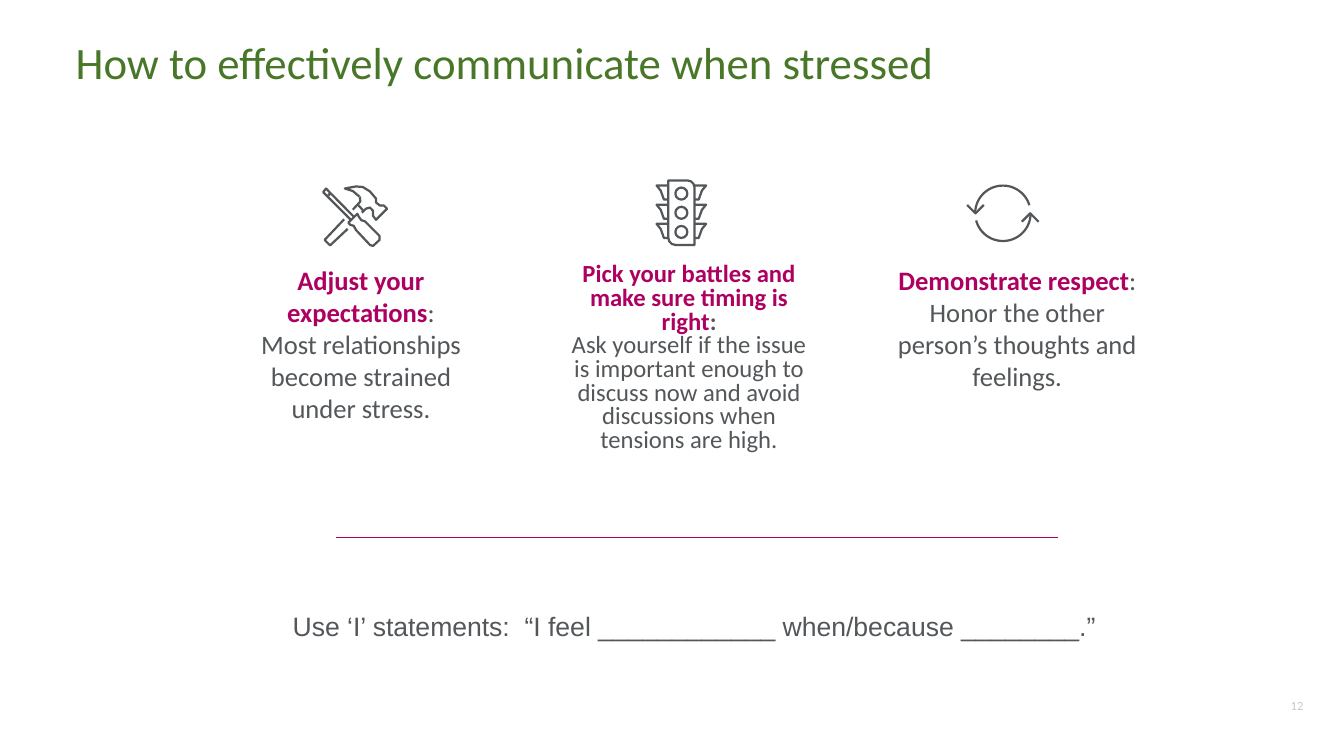
import math
from dataclasses import dataclass

from lxml import etree
from pptx import Presentation
from pptx import util as u
from pptx.dml.color import RGBColor
from pptx.enum import shapes, text
from pptx.oxml import ns


@dataclass(frozen=True)
class Theme:
    heading_font: str = "Calibri"
    plain_font: str = "Arial"
    green: str = "497728"
    magenta: str = "AE0061"
    gray: str = "53575A"
    pale: str = "C8C8C8"
    title_size: float = 32
    body_size: float = 19
    dense_size: float = 17.6
    number_size: float = 9
    rule_width: float = 0.75
    icon_stroke: float = 1.6


@dataclass(frozen=True)
class Box:
    left: float
    top: float
    width: float
    height: float

    def lengths(self):
        return [u.Pt(n) for n in (self.left, self.top, self.width, self.height)]

    def inner(self, left, top, width, height):
        return Box(self.left + left, self.top + top, width, height)


THEME = Theme()
PITCH = 234.4
FIRST_COLUMN = Box(170, 188.6, 175.7, 144)


def add_text(page, box, spans, size, font=THEME.heading_font, inset=0):
    """Add one paragraph of (words, colour, bold) spans; words of None break the line."""
    frame = page.shapes.add_textbox(*box.lengths()).text_frame
    frame.word_wrap = True
    frame.margin_left = frame.margin_right = u.Pt(inset)
    frame.margin_top = frame.margin_bottom = u.Pt(inset / 2)
    para = frame.paragraphs[0]
    para.font.size = u.Pt(size)
    for words, colour, bold in spans:
        if words is None:
            para.add_line_break()
            continue
        span = para.add_run()
        span.text = words
        span.font.name = font
        span.font.size = u.Pt(size)
        span.font.bold = bold
        span.font.color.rgb = RGBColor.from_string(colour)
    return frame


def outline(shape):
    """Leave the shape unfilled, with the icon stroke."""
    shape.shadow.inherit = False
    shape.fill.background()
    shape.line.color.rgb = RGBColor.from_string(THEME.gray)
    shape.line.width = u.Pt(THEME.icon_stroke)


def draw_path(page, box, points, close=False):
    """Stroke a path whose points are relative to the box."""
    start, *rest = [(u.Pt(box.left + x), u.Pt(box.top + y)) for x, y in points]
    builder = page.shapes.build_freeform(*start, scale=1.0)
    builder.add_line_segments(rest, close=close)
    outline(builder.convert_to_shape())


def draw_preset(page, box, kind):
    shape = page.shapes.add_shape(kind, *box.lengths())
    outline(shape)
    return shape


def tools_icon(page, box):
    screwdriver_shaft = [(23, 25.9), (3.2, 5.8), (1.1, 8.3), (20.9, 28.1)]
    shaft_slit = [(4.7, 9.4), (6.1, 10.8)]
    screwdriver_grip = [
        (25.6, 23.8), (19.1, 30.2), (20.5, 31.7), (23, 32.4), (24.5, 35.3), (34.6, 46.1),
        (36.7, 46.8), (41.4, 42.5), (41.4, 39.6), (31, 29.2), (28.4, 28.4), (26.6, 25.9)]
    hammer_handle = [(16.2, 27.7), (2.2, 42.5), (6.1, 46.4), (18.7, 34.6)]
    hammer_neck = [(27.4, 11.5), (27.7, 15.1), (22.3, 20.9)]
    neck_edge = [(25.6, 16.9), (30.2, 22)]
    hammer_head = [
        (28.8, 23), (31.7, 20.2), (34.6, 19.4), (36.7, 21.6), (36.7, 25.2), (38.9, 28.1),
        (46.8, 20.2), (44.6, 18), (41.8, 18), (38.9, 15.8), (38.9, 13), (34.6, 7.9),
        (29.5, 4.7), (24.5, 4.3), (16.6, 5.8), (22.3, 7.6), (27, 11.5)]
    for part in (screwdriver_shaft, shaft_slit, hammer_handle, hammer_neck,
                 neck_edge, hammer_head):
        draw_path(page, box, part)
    draw_path(page, box, screwdriver_grip, close=True)


def traffic_light_icon(page, box):
    housing = draw_preset(page, box.inner(9.4, 0.7, 18.7, 46.1),
                          shapes.MSO_SHAPE.ROUND_2_DIAG_RECTANGLE)
    housing.adjustments[0] = 0
    housing.adjustments[1] = 0.27
    flap = [(9.4, 4.3), (1, 4.3), (4, 8), (6.3, 14.4), (9.4, 14.4)]
    for lamp in range(3):
        drop = lamp * 13.7
        draw_preset(page, box.inner(14.4, 5.8 + drop, 8.6, 8.6), shapes.MSO_SHAPE.OVAL)
        draw_path(page, box, [(x, y + drop) for x, y in flap])
        draw_path(page, box, [(box.width - x, y + drop) for x, y in flap])


def cycle_icon(page, box):
    centre_x, centre_y, radius = 26.6, 20.6, 19.8
    for first, last in ((180, 343), (0, 165)):
        angles = [math.radians(first + (last - first) * step / 40) for step in range(41)]
        draw_path(page, box, [(centre_x + radius * math.cos(a),
                               centre_y + radius * math.sin(a)) for a in angles])
    for tip_x, tail_y in ((7, -6), (46.1, 6)):
        draw_path(page, box, [(tip_x - 6, centre_y + tail_y), (tip_x, centre_y),
                              (tip_x + 6, centre_y + tail_y)])


def title(page, box):
    frame = add_text(page, box, [("How to effectively communicate when stressed",
                                  THEME.green, False)], THEME.title_size)
    frame.paragraphs[0].line_spacing = 0.9


def advice_column(page, box, spans, dense=False):
    size = THEME.dense_size if dense else THEME.body_size
    para = add_text(page, box, spans, size).paragraphs[0]
    para.alignment = text.PP_ALIGN.CENTER
    if dense:
        para.line_spacing = 0.8
        para.space_before = para.space_after = u.Pt(3)


def advice_row(page, box):
    """Place three columns of advice, each under its icon."""
    magenta, gray = THEME.magenta, THEME.gray
    columns = [
        (tools_icon, Box(229.7, 128.9, 47.5, 48), False,
         [("Adjust your expectations", magenta, True), (":", gray, False), (None, gray, False),
          ("Most relationships become strained under stress.", gray, False)]),
        (traffic_light_icon, Box(468, 128.2, 37.4, 47.5), True,
         [("Pick your battles and make sure timing is right", magenta, True),
          (":", gray, True), (None, gray, True),
          ("Ask yourself if the issue is important enough to discuss now and avoid "
           "discussions when tensions are high.", gray, False)]),
        (cycle_icon, Box(689.8, 131.8, 52.6, 41.8), False,
         [("Demonstrate respect", magenta, True),
          (": Honor the other person’s thoughts and feelings.", gray, False)]),
    ]
    for index, (icon, icon_box, dense, spans) in enumerate(columns):
        advice_column(page, box.inner(index * PITCH, 0, box.width, box.height), spans, dense)
        icon(page, icon_box)


def divider(page, box):
    left, top, width, _ = box.lengths()
    rule = page.shapes.add_connector(shapes.MSO_CONNECTOR.STRAIGHT, left, top, left + width, top)
    rule.line.color.rgb = RGBColor.from_string(THEME.magenta)
    rule.line.width = u.Pt(THEME.rule_width)
    etree.SubElement(rule.element.spPr, ns.qn("a:effectLst"))


def statement(page, box):
    words = "Use ‘I’ statements:  “I feel ____________ when/because ________.”"
    frame = add_text(page, box, [(words, THEME.gray, False)], THEME.body_size,
                     THEME.plain_font, inset=7.2)
    frame.word_wrap = False


def page_number(page, box):
    frame = add_text(page, box, [("12", THEME.pale, False)], THEME.number_size)
    frame.vertical_anchor = text.MSO_ANCHOR.MIDDLE
    frame.paragraphs[0].alignment = text.PP_ALIGN.RIGHT


def main():
    deck = Presentation()
    deck.slide_width, deck.slide_height = u.Pt(960), u.Pt(540)
    page = deck.slides.add_slide(deck.slide_layouts[6])
    title(page, Box(54, 28.8, 877, 47.5))
    advice_row(page, FIRST_COLUMN)
    divider(page, Box(240, 384, 516, 0))
    statement(page, Box(202, 432, 602, 53))
    page_number(page, Box(835, 492, 96, 24))
    deck.save("out.pptx")


if __name__ == "__main__":
    main()
